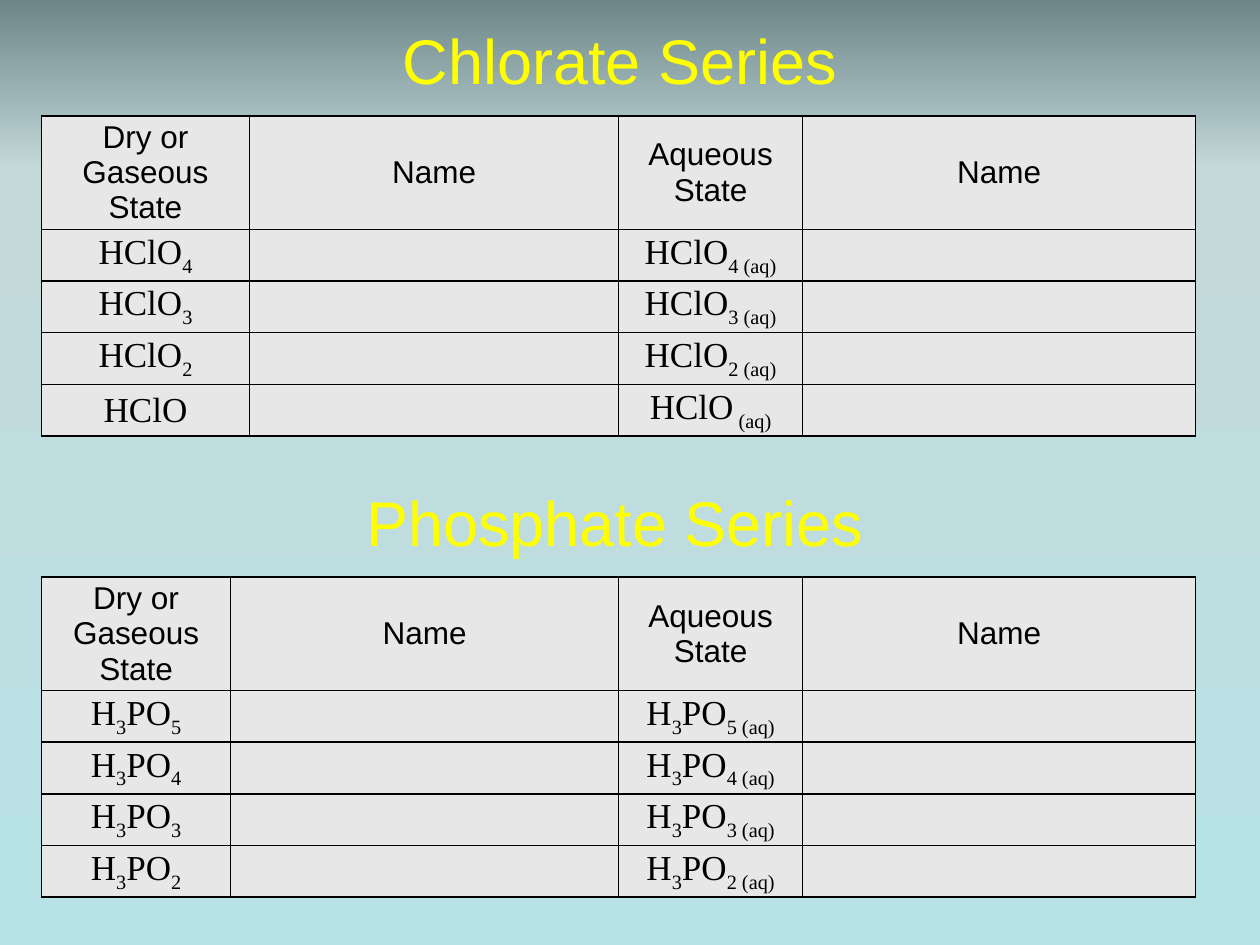
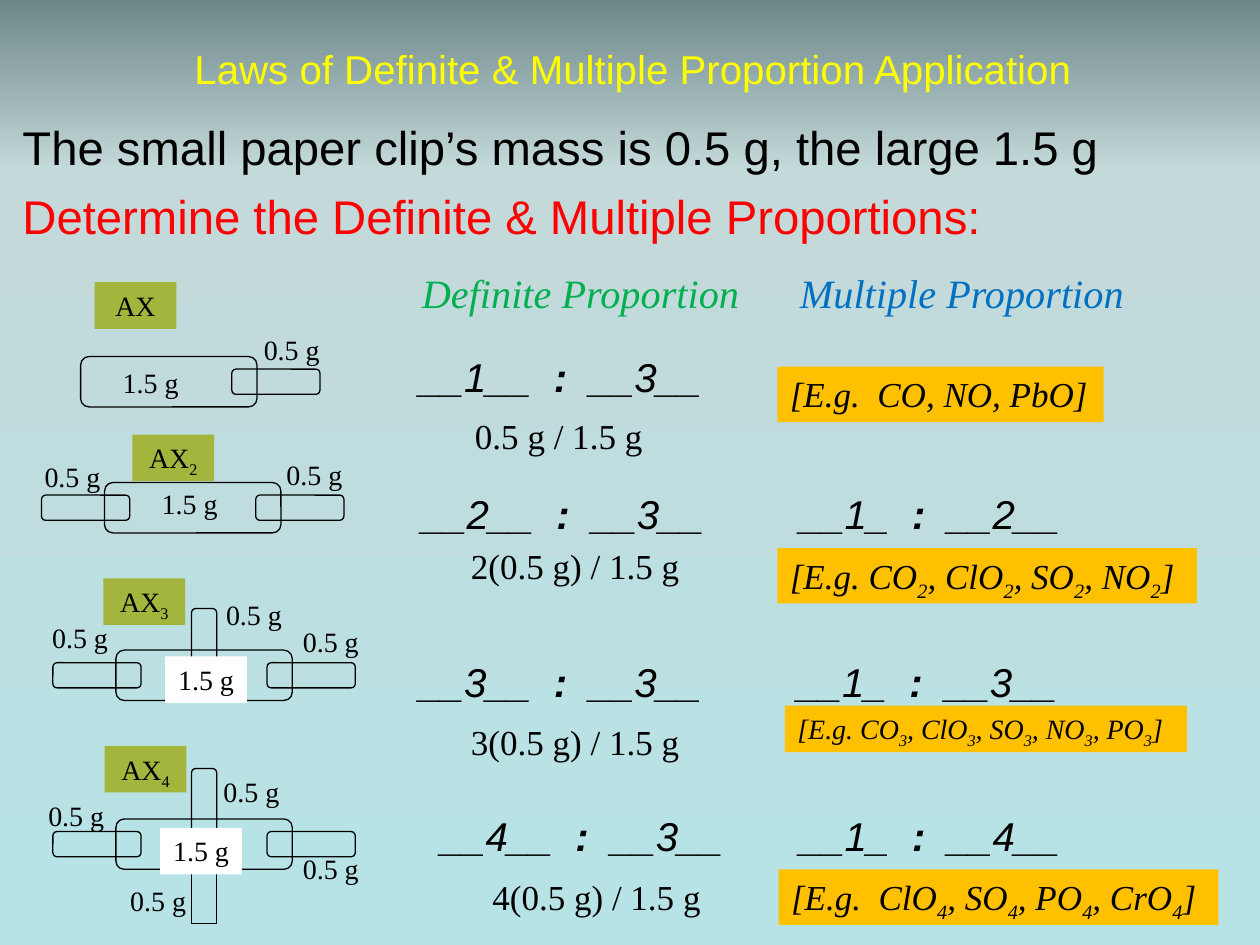
from copy import deepcopy

from lxml.etree import SubElement
from pptx import Presentation
from pptx.dml.color import RGBColor
from pptx.enum.shapes import MSO_SHAPE as Shape
from pptx.enum.text import MSO_ANCHOR as Anchor, PP_ALIGN as Align
from pptx.oxml.ns import qn
from pptx.util import Inches, Pt

COLORS = {
    "sky_top": "6D8688", "sky_mid": "C3D9DA", "sky_low": "B8E3E6",
    "title": "FFFF00", "ink": "000000", "alert": "FF0000",
    "definite": "00B050", "multiple": "0070C0", "cell": "E7E7E7",
    "example": "FFC000", "formula": "A3B53D", "mass": "FFFFFF",
}
SANS, SERIF = "Arial", "Times New Roman"
FORMATS = {
    "series": {"name": SANS, "size": Pt(36)},
    "title": {"name": SANS, "size": Pt(23)},
    "body": {"name": SANS, "size": Pt(27)},
    "head": {"name": SANS, "size": Pt(18)},
    "formula": {"name": SERIF, "size": Pt(20)},
    "column": {"name": SERIF, "size": Pt(23), "italic": True},
    "ratio": {"name": SANS, "size": Pt(23), "italic": True},
    "example": {"name": SERIF, "size": Pt(20), "italic": True},
    "small_example": {"name": SERIF, "size": Pt(16), "italic": True},
    "label": {"name": SERIF, "size": Pt(16)},
}


def rgb(color):
    return RGBColor.from_string(COLORS[color])


class SlideBuilder:
    """Hold the shared style and the current slide, and draw each kind of element."""

    def __init__(self):
        self.deck = Presentation()
        self.deck.slide_width, self.deck.slide_height = Inches(10), Inches(7.5)
        self.paint_background()

    def paint_background(self):
        fill = self.deck.slide_master.background.fill
        fill.gradient()
        fill.gradient_angle = 270
        first = fill.gradient_stops[0]._gs
        first.addnext(deepcopy(first))
        stops = (("sky_top", 0), ("sky_mid", 0.18), ("sky_low", 1))
        for stop, (color, position) in zip(fill.gradient_stops, stops):
            stop.color.rgb = rgb(color)
            stop.position = position

    def new_page(self):
        self.page = self.deck.slides.add_slide(self.deck.slide_layouts[6])

    def add_spans(self, para, text, style, color="ink", accent="sub"):
        for index, part in enumerate(text.split("|")):
            if not part:
                continue
            span = para.add_run()
            span.text = part
            for key, value in FORMATS[style].items():
                setattr(span.font, key, value)
            span.font.color.rgb = rgb(color)
            if index % 2 and accent == "bold":
                span.font.bold = True
            elif index % 2:
                span._r.get_or_add_rPr().set("baseline", "-25000")

    def text(self, area, text, style, color="ink", fill=None, align=Align.LEFT,
             anchor=Anchor.TOP, wrap=True, accent="sub", tab=None):
        place = [Inches(length) for length in area]
        if fill:
            box = self.page.shapes.add_shape(Shape.RECTANGLE, *place)
            box.shadow.inherit = False
            box.fill.solid()
            box.fill.fore_color.rgb = rgb(fill)
            box.line.fill.background()
        else:
            box = self.page.shapes.add_textbox(*place)
        frame = box.text_frame
        frame.word_wrap, frame.vertical_anchor = wrap, anchor
        para = frame.paragraphs[0]
        para.alignment = align
        if tab:
            stops = SubElement(para._p.get_or_add_pPr(), qn("a:tabLst"))
            SubElement(stops, qn("a:tab"), pos=str(Inches(tab)), algn="l")
        self.add_spans(para, text, style, color, accent)
        return frame

    def title(self, area, text, style):
        self.text(area, text, style, "title", align=Align.CENTER, anchor=Anchor.MIDDLE)

    def label(self, left, top, text, fill=None):
        self.text((left, top, 0.65, 0.37), text, "label", fill=fill,
                  align=Align.CENTER, wrap=False)

    def clip(self, left, top, width, height, kind=Shape.FLOWCHART_ALTERNATE_PROCESS):
        place = [Inches(length) for length in (left, top, width, height)]
        clip = self.page.shapes.add_shape(kind, *place)
        clip.shadow.inherit = False
        clip.fill.background()
        clip.line.color.rgb = rgb("ink")
        clip.line.width = Pt(0.75)

    def cell(self, cell, text, style):
        cell.margin_left = cell.margin_right = Inches(0.07)
        cell.margin_top = cell.margin_bottom = 0
        cell.vertical_anchor = Anchor.MIDDLE
        for side in ("a:lnL", "a:lnR", "a:lnT", "a:lnB"):
            border = SubElement(cell._tc.get_or_add_tcPr(), qn(side), w=str(Pt(1)))
            paint = SubElement(border, qn("a:solidFill"))
            SubElement(paint, qn("a:srgbClr"), val=COLORS["ink"])
        cell.fill.solid()
        cell.fill.fore_color.rgb = rgb("cell")
        para = cell.text_frame.paragraphs[0]
        para.alignment = Align.CENTER
        self.add_spans(para, text, style)

    def table(self, top, widths, rows):
        table = self.page.shapes.add_table(
            len(rows), len(widths), Inches(0.33), Inches(top),
            Inches(sum(widths)), Inches(2.47)).table
        table.first_row = table.horz_banding = False
        for column, width in zip(table.columns, widths):
            column.width = Inches(width)
        for index, texts in enumerate(rows):
            table.rows[index].height = Inches(0.41 if index else 0.83)
            for cell, text in zip(table.rows[index].cells, texts):
                self.cell(cell, text, "formula" if index else "head")


def acid_rows(stem, counts):
    head = ("Dry or Gaseous State", "Name", "Aqueous State", "Name")
    return [head] + [(f"{stem}|{count}", "", f"{stem}|{count} (aq)", "")
                     for count in counts]


def build_series(builder):
    builder.new_page()
    builder.title((2.92, 0.03, 4, 0.88), "Chlorate Series", "series")
    builder.table(0.92, (1.65, 2.93, 1.46, 3.12), acid_rows("HClO", ("4", "3", "2", "")))
    builder.table(4.58, (1.5, 3.08, 1.46, 3.12), acid_rows("H|3|PO", "5432"))
    builder.title((2.67, 3.7, 4.42, 0.88), "Phosphate Series", "series")


def build_clips(builder):
    small = {"left": (-0.5, 0.1, 0.7, 0.2), "right": (1.2, 0.1, 0.7, 0.2)}
    molecules = (
        ("AX", 0.64, 2.83, ("right",), (0.75, 2.24), (0.87, 2.85), None,
         ((1.99, 2.59),)),
        ("AX|2", 0.83, 3.83, ("left", "right"), (1.05, 3.45), (1.18, 3.81), None,
         ((2.17, 3.58), (0.25, 3.6))),
        ("AX|3", 0.92, 5.16, ("left", "right"), (0.82, 4.59), (1.31, 5.21), "mass",
         ((2.3, 4.91), (1.69, 4.69), (0.31, 4.88))),
        ("AX|4", 0.92, 6.5, ("left", "right"), (0.83, 5.92), (1.27, 6.57), "mass",
         ((0.93, 6.96), (0.28, 6.29), (1.67, 6.1), (2.3, 6.71))),
    )
    builder.clip(1.52, 4.83, 0.2, 0.6)
    builder.clip(1.52, 6.1, 0.2, 0.6)
    builder.clip(1.52, 6.8, 0.2, 0.53, Shape.RECTANGLE)
    for formula, left, top, sides, tag, center, fill, masses in molecules:
        builder.clip(left, top, 1.4, 0.4)
        for side in sides:
            shift, drop, width, height = small[side]
            builder.clip(left + shift, top + drop, width, height)
        for mass in masses:
            builder.label(*mass, "0.5 g")
        builder.label(*center, "1.5 g", fill)
        builder.label(*tag, formula, "formula")


def build_proportions(builder):
    builder.new_page()
    builder.title((0.75, 0, 8.56, 1.08),
                  "Laws of Definite & Multiple Proportion Application", "title")
    frame = builder.text((0.08, 0.89, 9.75, 1.27),
                         "The small paper clip’s mass is 0.5 g, the large 1.5 g", "body")
    para = frame.add_paragraph()
    para.space_before = Pt(7)
    builder.add_spans(para, "Determine the Definite & Multiple Proportions:",
                      "body", "alert")
    frame = builder.text((3.25, 2.08, 6.42, 0.49), "Definite Proportion\t",
                         "column", "definite", tab=3)
    builder.add_spans(frame.paragraphs[0], "Multiple Proportion", "column", "multiple")

    ratios = ((3.23, 2.75, 3.37, 3.24, 3), (3.25, 3.83, 3.5, 4.27, 3),
              (3.23, 5.17, 3.5, 5.67, 3), (3.4, 6.39, 3.67, 6.9, 2.85))
    for count, (left, top, mass_left, mass_top, tab) in enumerate(ratios, 1):
        ratio = f"__{count}__  |:|  __3__"
        mass = "0.5 g"
        if count > 1:
            ratio += f"\t__1_  |:|  __{count}__"
            mass = f"{count}(0.5 g)"
        builder.text((left, top, 5.85, 0.49), ratio, "ratio", accent="bold", tab=tab)
        builder.text((mass_left, mass_top, 2.13, 0.44), f"{mass} / 1.5 g", "formula",
                     align=Align.CENTER)

    build_clips(builder)
    examples = (
        ((6.17, 2.91, 2.59, 0.44), "[E.g.  CO, NO, PbO]", "example"),
        ((6.17, 4.35, 3.33, 0.44), "[E.g. CO|2|, ClO|2|, SO|2|, NO|2|]", "example"),
        ((6.23, 5.6, 3.19, 0.37), "[E.g. CO|3|, ClO|3|, SO|3|, NO|3|, PO|3|]",
         "small_example"),
        ((6.18, 6.9, 3.49, 0.44), "[E.g.  ClO|4|, SO|4|, PO|4|, CrO|4|]", "example"),
    )
    for area, text, style in examples:
        builder.text(area, text, style, fill="example")


def main():
    builder = SlideBuilder()
    build_series(builder)
    build_proportions(builder)
    builder.deck.save("out.pptx")


if __name__ == "__main__":
    main()
